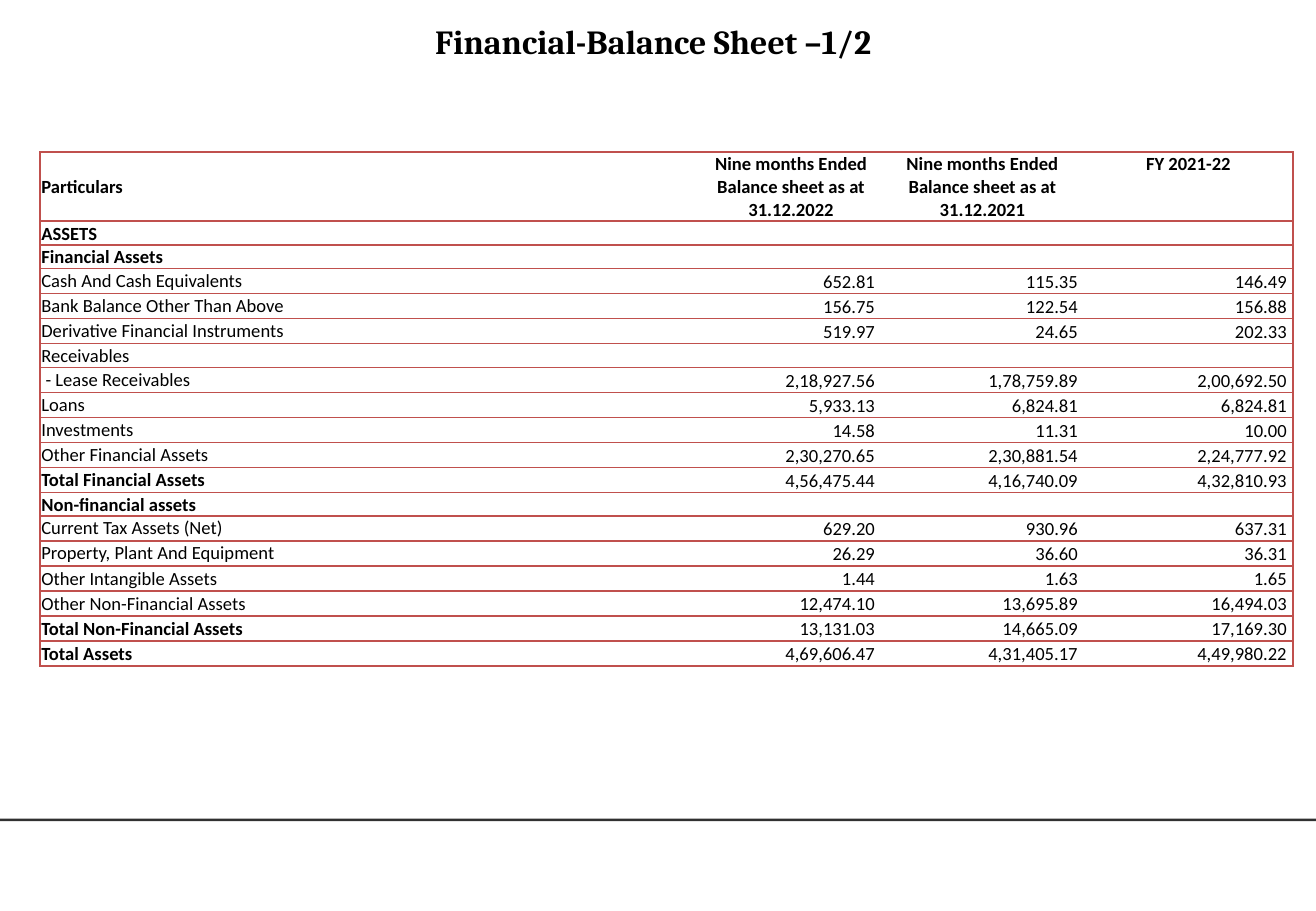
import pptx
import pptx.util
import pptx.dml.color
import pptx.enum.shapes
import pptx.enum.text
import pptx.oxml.ns
from lxml import etree

SLIDE_WIDTH = pptx.util.Inches(10.83)
SLIDE_HEIGHT = pptx.util.Inches(7.5)
COLORS = {"text": "000000", "paper": "FFFFFF", "border": "C0504D", "footer": "313131"}
ALIGN = pptx.enum.text.PP_ALIGN
ANCHOR = pptx.enum.text.MSO_ANCHOR

COLUMN_SHARES = [50.23, 13.67, 15.42, 15.88]
HEADER_SHARE, SECTION_SHARE, ITEM_SHARE = 7.61, 2.6, 2.75

HEADINGS = [
    "Particulars",
    "Nine months Ended Balance sheet as at 31.12.2022",
    "Nine months Ended Balance sheet as at 31.12.2021",
    "FY 2021-22",
]
BALANCES = [
    ("ASSETS",),
    ("Financial Assets",),
    ("Cash And Cash Equivalents", "652.81", "115.35", "146.49"),
    ("Bank Balance Other Than Above", "156.75", "122.54", "156.88"),
    ("Derivative Financial Instruments", "519.97", "24.65", "202.33"),
    ("Receivables",),
    (" - Lease Receivables", "2,18,927.56", "1,78,759.89", "2,00,692.50"),
    ("Loans", "5,933.13", "6,824.81", "6,824.81"),
    ("Investments", "14.58", "11.31", "10.00"),
    ("Other Financial Assets", "2,30,270.65", "2,30,881.54", "2,24,777.92"),
    ("Total Financial Assets", "4,56,475.44", "4,16,740.09", "4,32,810.93"),
    ("Non-financial assets",),
    ("Current Tax Assets (Net)", "629.20", "930.96", "637.31"),
    ("Property, Plant And Equipment", "26.29", "36.60", "36.31"),
    ("Other Intangible Assets", "1.44", "1.63", "1.65"),
    ("Other Non-Financial Assets", "12,474.10", "13,695.89", "16,494.03"),
    ("Total Non-Financial Assets", "13,131.03", "14,665.09", "17,169.30"),
    ("Total Assets", "4,69,606.47", "4,31,405.17", "4,49,980.22"),
]
BOLD_LABELS = {"ASSETS", "Financial Assets", "Non-financial assets"}


def across(percent):
    return round(SLIDE_WIDTH * percent / 100)


def down(percent):
    return round(SLIDE_HEIGHT * percent / 100)


def color(name):
    return pptx.dml.color.RGBColor.from_string(COLORS[name])


def write(frame, text, size=11, font="Calibri", bold=False, align=ALIGN.LEFT):
    line = frame.paragraphs[0]
    line.alignment = align
    if not text:
        etree.SubElement(line._p, pptx.oxml.ns.qn("a:endParaRPr"), sz="600")
        return
    run = line.add_run()
    run.text = text
    run.font.size = pptx.util.Pt(size)
    run.font.name = font
    run.font.bold = bold
    run.font.color.rgb = color("text")


def rule_cell(cell, red_sides):
    properties = cell._tc.get_or_add_tcPr()
    for side in "LRTB":
        edge = etree.SubElement(properties, pptx.oxml.ns.qn(f"a:ln{side}"), w="12700")
        if side in red_sides:
            fill = etree.SubElement(edge, pptx.oxml.ns.qn("a:solidFill"))
            etree.SubElement(fill, pptx.oxml.ns.qn("a:srgbClr"), val=COLORS["border"])
        else:
            etree.SubElement(edge, pptx.oxml.ns.qn("a:noFill"))
    cell.fill.solid()
    cell.fill.fore_color.rgb = color("paper")


def add_footer_rule(slide):
    footer = slide.shapes.add_shape(
        pptx.enum.shapes.MSO_SHAPE.RECTANGLE, 0, down(89.87), SLIDE_WIDTH, down(0.27))
    footer.shadow.inherit = False
    footer.fill.solid()
    footer.fill.fore_color.rgb = color("footer")
    footer.line.fill.background()


def add_title(slide, text):
    title = slide.shapes.add_textbox(across(33.06), down(2.27), across(43.86), down(4.53))
    frame = title.text_frame
    frame.word_wrap = True
    frame.margin_left = frame.margin_right = frame.margin_top = frame.margin_bottom = 0
    write(frame, text, size=20, font="Cambria", bold=True)


def fill_cell(cell, text, row, column):
    last_column = len(HEADINGS) - 1
    rule_cell(cell, "TB" + ("L" if column == 0 else "R" if column == last_column else ""))
    is_amount = row > 0 and column > 0
    cell.margin_left = cell.margin_top = pptx.util.Inches(0.01)
    cell.margin_right = pptx.util.Inches(0.05 if is_amount else 0.01)
    cell.margin_bottom = 0
    if is_amount:
        cell.vertical_anchor = ANCHOR.BOTTOM
    else:
        cell.vertical_anchor = ANCHOR.MIDDLE if row == 0 and column == 0 else ANCHOR.TOP
    bold = row == 0 or text in BOLD_LABELS or text.startswith("Total")
    align = ALIGN.LEFT if column == 0 else ALIGN.RIGHT if is_amount else ALIGN.CENTER
    write(cell.text_frame, text, bold=bold, align=align)


def add_balance_sheet(slide):
    row_shares = [HEADER_SHARE] + [
        SECTION_SHARE if len(entry) == 1 else ITEM_SHARE for entry in BALANCES]
    sheet = slide.shapes.add_table(
        len(row_shares), len(COLUMN_SHARES), across(3.05), down(16.67),
        across(sum(COLUMN_SHARES)), down(sum(row_shares))).table
    sheet.first_row = sheet.horz_banding = False
    for column, share in zip(sheet.columns, COLUMN_SHARES):
        column.width = across(share)
    for row, share in zip(sheet.rows, row_shares):
        row.height = down(share)
    for row, entry in enumerate([HEADINGS, *BALANCES]):
        for column in range(len(HEADINGS)):
            text = entry[column] if column < len(entry) else ""
            fill_cell(sheet.cell(row, column), text, row, column)


def main():
    deck = pptx.Presentation()
    deck.slide_width = SLIDE_WIDTH
    deck.slide_height = SLIDE_HEIGHT
    slide = deck.slides.add_slide(deck.slide_layouts[6])
    add_footer_rule(slide)
    add_title(slide, "Financial-Balance Sheet –1/2")
    add_balance_sheet(slide)
    deck.save("out.pptx")


if __name__ == "__main__":
    main()
